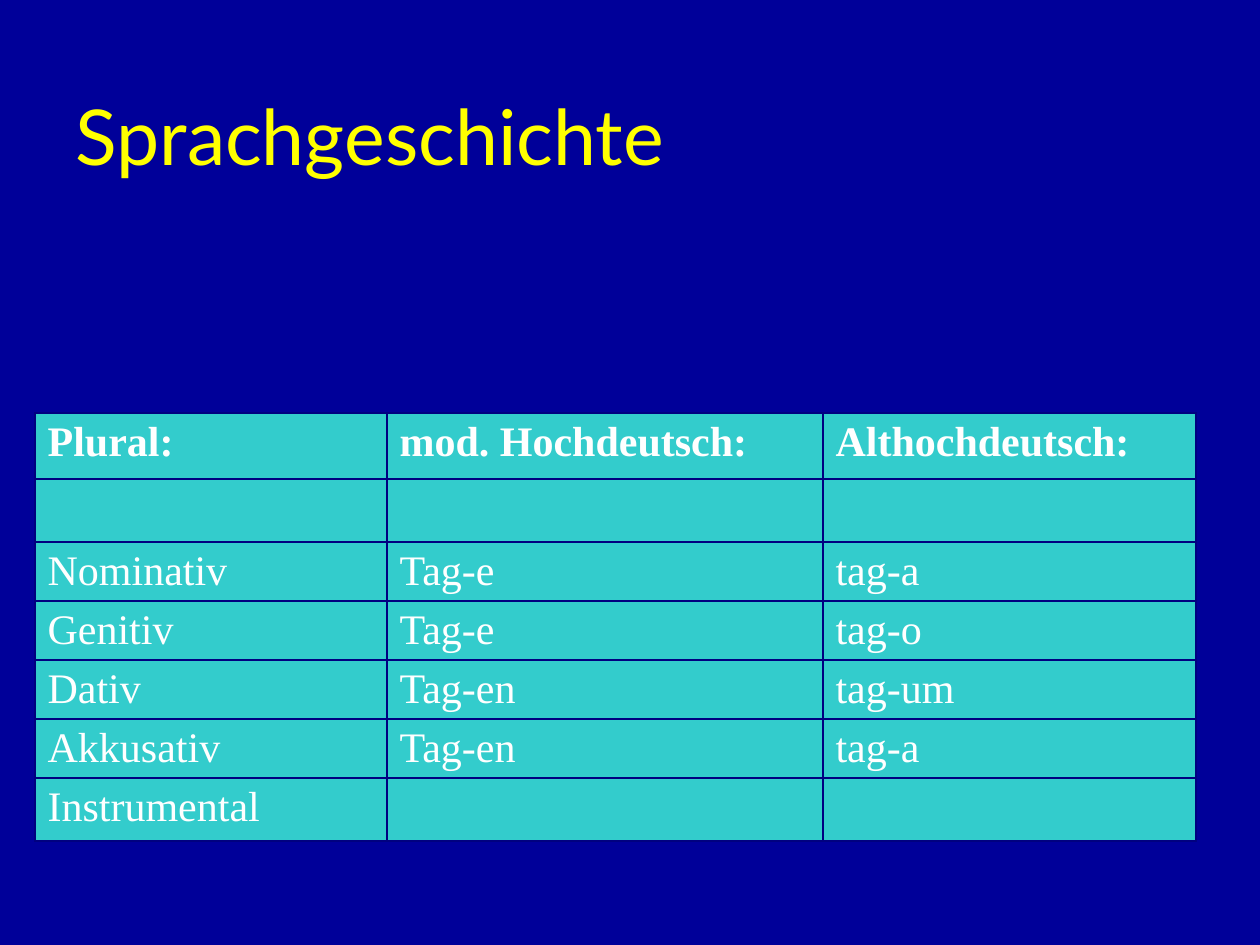
from lxml import etree
from pptx import Presentation
from pptx.dml.color import RGBColor
from pptx.enum.text import MSO_ANCHOR, PP_ALIGN
from pptx.oxml.ns import qn
from pptx.util import Emu, Pt

LEFT, MIDDLE, TOP = PP_ALIGN.LEFT, MSO_ANCHOR.MIDDLE, MSO_ANCHOR.TOP
SCALE = 914400 / 126
COLORS = {"back": "000099", "title": "FFFF00", "text": "FFFFFF",
          "cell": "33CCCC", "border": "000080"}
COLS = [352, 436, 373]
ROWS = [66, 63, 59, 59, 59, 59, 63]
CASES = [
    ["Plural:", "mod. Hochdeutsch:", "Althochdeutsch:"],
    ["", "", ""],
    ["Nominativ", "Tag-e", "tag-a"],
    ["Genitiv", "Tag-e", "tag-o"],
    ["Dativ", "Tag-en", "tag-um"],
    ["Akkusativ", "Tag-en", "tag-a"],
    ["Instrumental", "", ""],
]


def px(count):
    return Emu(round(count * SCALE))


def color(name):
    return RGBColor.from_string(COLORS[name])


def write(frame, text, size=24, font="Times New Roman", tint="text", bold=False):
    para = frame.paragraphs[0]
    para.alignment = LEFT
    run = para.add_run()
    run.text = text
    run.font.size = Pt(size)
    run.font.name = font
    run.font.bold = bold
    run.font.color.rgb = color(tint)


def add_title(slide, text):
    title = slide.shapes.title
    title.left, title.top, title.width, title.height = map(px, (63, 40, 1134, 190))
    title.text_frame.vertical_anchor = MIDDLE
    write(title.text_frame, text, size=44, font="Lato", tint="title")


def add_border(cell):
    """Draw all four sides; the lines must precede the fill in the XML."""
    props = cell._tc.get_or_add_tcPr()
    for spot, side in enumerate(("lnL", "lnR", "lnT", "lnB")):
        line = etree.Element(qn(f"a:{side}"), w=str(Pt(1)))
        fill = etree.SubElement(line, qn("a:solidFill"))
        etree.SubElement(fill, qn("a:srgbClr"), val=COLORS["border"])
        props.insert(spot, line)


def style_cell(cell):
    cell.fill.solid()
    cell.fill.fore_color.rgb = color("cell")
    cell.vertical_anchor = TOP
    cell.margin_top, cell.margin_bottom = px(6), px(4)
    add_border(cell)


def add_cases(slide, left, top):
    frame = slide.shapes.add_table(len(ROWS), len(COLS), px(left), px(top),
                                   px(sum(COLS)), px(sum(ROWS)))
    table = frame.table
    table.horz_banding = False
    for col, width in zip(table.columns, COLS):
        col.width = px(width)
    for index, (row, height, words) in enumerate(zip(table.rows, ROWS, CASES)):
        row.height = px(height)
        for cell, word in zip(row.cells, words):
            style_cell(cell)
            if word:
                write(cell.text_frame, word, bold=index == 0)


def main():
    deck = Presentation()
    deck.slide_width, deck.slide_height = px(1260), px(945)
    slide = deck.slides.add_slide(deck.slide_layouts[5])
    slide.background.fill.solid()
    slide.background.fill.fore_color.rgb = color("back")
    add_title(slide, "Sprachgeschichte")
    add_cases(slide, 35, 413)
    deck.save("out.pptx")


if __name__ == "__main__":
    main()
